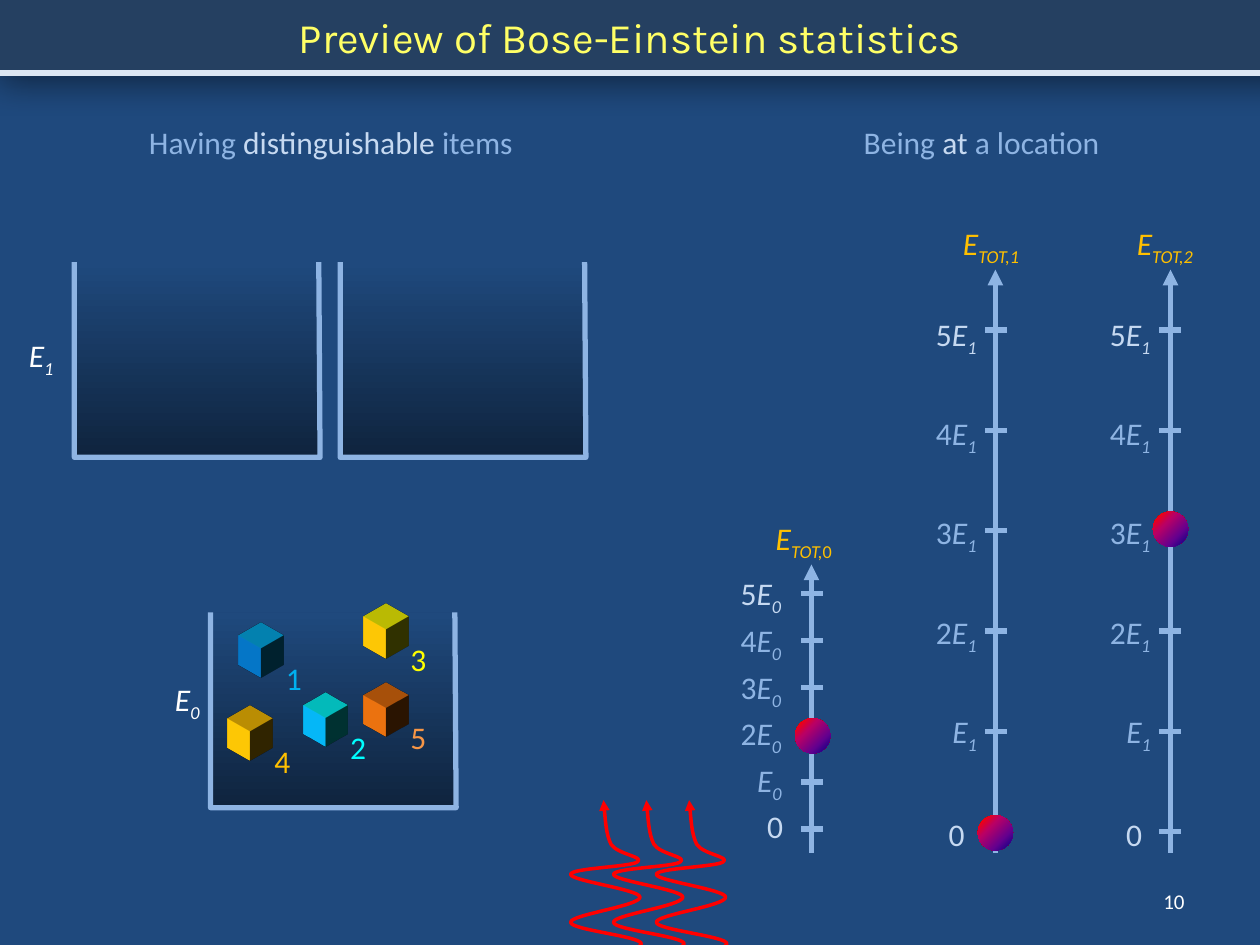
import pptx
import pptx.util
import pptx.oxml
import pptx.dml.color
import pptx.enum.text
import pptx.enum.shapes
import lxml.etree

Pt, Rgb = pptx.util.Pt, pptx.dml.color.RGBColor.from_string
ALIGN = pptx.enum.text.PP_ALIGN
MID = pptx.enum.text.MSO_ANCHOR.MIDDLE
SHAPE = pptx.enum.shapes.MSO_SHAPE
NS = "http://schemas.openxmlformats.org/drawingml/2006/main"
HUE = {"back": "1F497D", "band": "254061", "title": "FFFF66", "rule": "DCE6F2",
       "line": "8EB4E3", "pale": "C6D9F1", "deep": "0F243E", "gold": "FFC000",
       "white": "FFFFFF", "red": "FF0000"}

deck = pptx.Presentation()
deck.slide_width, deck.slide_height = pptx.util.Inches(10), pptx.util.Inches(7.5)
slide = deck.slides.add_slide(deck.slide_layouts[5])
slide.background.fill.solid()
slide.background.fill.fore_color.rgb = Rgb(HUE["back"])
shapes = slide.shapes
cell = deck.slide_width / 10  # grid of 10 columns by 7.5 rows


def grid(*nums):
    return [round(n * cell) for n in nums]


def write(frame, runs, align="LEFT", size=18, font="Calibri", wrap=False):
    """Each run is text, colour and marks: i for italic, s for subscript."""
    frame.word_wrap = wrap
    para = frame.paragraphs[0]
    para.alignment = ALIGN[align]
    for words, hue, marks in runs:
        run = para.add_run()
        run.text = words
        look = {"size": Pt(size), "name": font, "italic": "i" in marks}
        for name, value in look.items():
            setattr(run.font, name, value)
        run.font.color.rgb = Rgb(hue)
        if "s" in marks:
            run.font._element.set("baseline", "-25000")


# Open bins
for x, y in [(1.67, 4.86), (2.7, 2.08), (0.59, 2.08)]:
    pen = shapes.build_freeform(*grid(x, y))
    pen.add_line_segments([grid(x + dx, y + dy) for dx, dy in
                           [(0, 1.55), (1.95, 1.55), (1.94, 0)]], close=False)
    vat = pen.convert_to_shape()
    vat.shadow.inherit = False
    vat.fill.gradient()
    vat.fill.gradient_angle = 90
    for stop, hue, spot in zip(vat.fill.gradient_stops, ("deep", "back"), (0, 1)):
        stop.color.rgb = Rgb(HUE[hue])
        stop.position = spot
    vat.line.color.rgb = Rgb(HUE["line"])
    vat.line.width = Pt(3)

# Title band with its shadow, and the frame whose top edge is the rule
title = shapes.title
title.left, title.top, title.width, title.height = grid(0, 0, 10, 0.58)
title.fill.solid()
title.fill.fore_color.rgb = Rgb(HUE["band"])
title.text_frame.vertical_anchor = MID
write(title.text_frame, [("Preview of Bose-Einstein statistics", HUE["title"], "")],
      "CENTER", 24, "Karla", True)
title._element.spPr.append(pptx.oxml.parse_xml(
    f'<a:effectLst xmlns:a="{NS}"><a:outerShdw blurRad="{Pt(20)}" dist="{Pt(5)}" '
    'dir="5400000" sx="110000" algn="ctr" rotWithShape="0"><a:srgbClr val="000000">'
    '<a:alpha val="50000"/></a:srgbClr></a:outerShdw></a:effectLst>'))
frame = shapes.add_shape(SHAPE.RECTANGLE, *grid(-0.17, 0.58, 10.33, 7.17))
frame.shadow.inherit = False
frame.fill.background()
frame.line.color.rgb = Rgb(HUE["rule"])
frame.line.width = Pt(3)

# Numbered cubes: rectangles turned and extruded; number, place, ink, front, sides
labels = []
cubes = [("1", 1.86, 5.07, "00B0F0", "0070C0", "00B0F0"),
         ("3", 2.85, 4.92, "FFFF00", "FFC000", "FFFF00"),
         ("2", 2.37, 5.62, "00FFFF", "00B0F0", "00FFFF"),
         ("4", 1.77, 5.73, "FFC000", "FFC000", "FFC000"),
         ("5", 2.85, 5.54, "F79646", "E46C0A", "E46C0A")]
for num, x, y, ink, front, side in cubes:
    cube = shapes.add_shape(SHAPE.RECTANGLE, *grid(x, y, 0.25, 0.28))
    cube.shadow.inherit = False
    cube.fill.solid()
    cube.fill.fore_color.rgb = Rgb(front)
    cube.line.fill.background()
    for part in (
            '<a:scene3d xmlns:a="%s"><a:camera prst="isometricLeftDown"/>'
            '<a:lightRig rig="threePt" dir="t"/></a:scene3d>' % NS,
            '<a:sp3d xmlns:a="%s" extrusionH="%d"><a:extrusionClr><a:srgbClr val="%s"/>'
            '</a:extrusionClr></a:sp3d>' % (NS, grid(0.25)[0], side)):
        cube._element.spPr.append(pptx.oxml.parse_xml(part))
    labels.append((x + 0.31, y + 0.11, 0.33, [(num, ink, "")]))

# Heat waves: Bezier nodes, drawn lying down and turned upright
wave = [(4.78, 8.17), (4.63, 8.14), (4.49, 8.11), (4.54, 8.06), (4.59, 8.01), (5.08, 7.94),
        (5.08, 7.88), (5.08, 7.81), (4.54, 7.75), (4.54, 7.69), (4.54, 7.63), (5.09, 7.55),
        (5.09, 7.49), (5.09, 7.43), (4.53, 7.38), (4.53, 7.32), (4.52, 7.26), (5.08, 7.19),
        (5.08, 7.12), (5.08, 7.06), (4.53, 6.99), (4.53, 6.94), (4.52, 6.89), (5.01, 6.88),
        (5.06, 6.84), (5.12, 6.8), (4.9, 6.78), (4.85, 6.7), (4.81, 6.62), (4.79, 6.35),
        (4.79, 6.35)]
midx, midy = 4.81, 7.26
for shift in (0, 0.34, 0.68):
    nodes = [grid(midx + shift + midy - y, midy + x - midx) for x, y in wave]
    pen = shapes.build_freeform(*nodes[0])
    pen.add_line_segments(nodes[3::3], close=False)
    heat = pen.convert_to_shape()
    steps = list(heat._element.iter(f"{{{NS}}}lnTo"))
    for k, step in enumerate(steps):
        step.tag = f"{{{NS}}}cubicBezTo"
        for n, (x, y) in enumerate(nodes[3 * k + 1:3 * k + 3]):
            spot = lxml.etree.Element(f"{{{NS}}}pt", x=str(x - heat.left), y=str(y - heat.top))
            step.insert(n, spot)
    heat.rotation = 270
    heat.shadow.inherit = False
    heat.fill.background()
    heat.line.color.rgb = Rgb(HUE["red"])
    heat.line.width = Pt(2)
    lxml.etree.SubElement(heat.line._get_or_add_ln(), f"{{{NS}}}tailEnd", type="triangle")

# Energy axes: x, tick left, top, scale foot, tick step, label foot, label step,
# label right, zero right, zero top
axes = [(6.44, 6.36, 4.48, 6.58, 0.374, 6.36, 0.37, 6.32, 6.32, 6.36),
        (7.9, 7.82, 2.14, 6.6, 0.796, 6.39, 0.788, 7.87, 7.76, 6.42),
        (9.29, 9.2, 2.14, 6.6, 0.796, 6.39, 0.788, 9.25, 9.17, 6.42)]
lines = []
for x, left, top, foot, step, base, gap, right, edge, zero in axes:
    sub = "0" if x < 7 else "1"
    lines.append((x, 6.77, x, top, True))
    lines += [(left, foot - n * step, left + 0.17, foot - n * step, False) for n in range(6)]
    labels.append((edge - 0.33, zero, 0.33, [("0", HUE["pale"], "")]))
    for n in range(1, 6):
        hue = HUE["pale"] if n == 5 else HUE["line"]
        wide = 0.41 if n == 1 else 0.54
        runs = [("E", hue, "i"), (sub, hue, "is")]
        if n > 1:
            runs.insert(0, (str(n), hue, ""))
        labels.append((right - wide, base - n * gap, wide, runs))
for x, y, end, low, head in lines:
    line = shapes.add_connector(pptx.enum.shapes.MSO_CONNECTOR.STRAIGHT, *grid(x, y, end, low))
    line.line.color.rgb = Rgb(HUE["line"])
    line.line.width = Pt(3)
    if head:
        lxml.etree.SubElement(line.line._get_or_add_ln(), f"{{{NS}}}tailEnd", type="triangle")
    lxml.etree.SubElement(line._element.spPr, f"{{{NS}}}effectLst")

# Labels of bins, cubes and scales
for x, y, sub in [(1.29, 5.35, "0"), (0.13, 2.62, "1")]:
    labels.append((x, y, 0.41, [("E", HUE["white"], "i"), (sub, HUE["white"], "is")]))
for x, y, wide, runs in labels:
    write(shapes.add_textbox(*grid(x, y, wide, 0.4)).text_frame, runs)

# Headings, axis names and page number
gold, blue, pale = HUE["gold"], HUE["line"], HUE["pale"]
heads = [(5.25, 0.93, 5.08, [("Being ", blue, ""), ("at ", pale, ""), ("a location", blue, "")]),
         (0.78, 0.93, 3.69, [("Having ", blue, ""), ("distinguishable ", pale, ""),
                             ("items", blue, "")]),
         (7.32, 1.73, 1.09, [("E", gold, "i"), ("TOT,1", gold, "is")]),
         (5.73, 4.07, 1.3, [("E", gold, "i"), ("TOT,", gold, "is"), ("0", gold, "s")]),
         (8.7, 1.73, 1.09, [("E", gold, "i"), ("TOT,2", gold, "is")])]
for x, y, wide, runs in heads:
    write(shapes.add_textbox(*grid(x, y, wide, 0.4)).text_frame, runs, "CENTER", wrap=True)
page = shapes.add_textbox(*grid(7.17, 6.95, 2.33, 0.4)).text_frame
page.vertical_anchor = MID
write(page, [("10", HUE["white"], "")], "RIGHT", 12, wrap=True)

# Balls marking the total energies
glow = [(0, "000082"), (30, "66008F"), (65, "BA0066"), (90, "FF0000"), (100, "FF8200")]
stops = "".join(f'<a:gs pos="{p * 1000}"><a:srgbClr val="{hue}"/></a:gs>' for p, hue in glow)
for x, y in [(7.76, 6.47), (9.15, 4.06), (6.31, 5.7)]:
    ball = shapes.add_shape(SHAPE.OVAL, *grid(x, y, 0.28, 0.28))
    ball.shadow.inherit = False
    ball.line.fill.background()
    ball._element.spPr.insert(2, pptx.oxml.parse_xml(
        f'<a:gradFill xmlns:a="{NS}"><a:gsLst>{stops}</a:gsLst><a:path path="circle">'
        '<a:fillToRect l="100000" t="100000"/></a:path></a:gradFill>'))

deck.save("out.pptx")
